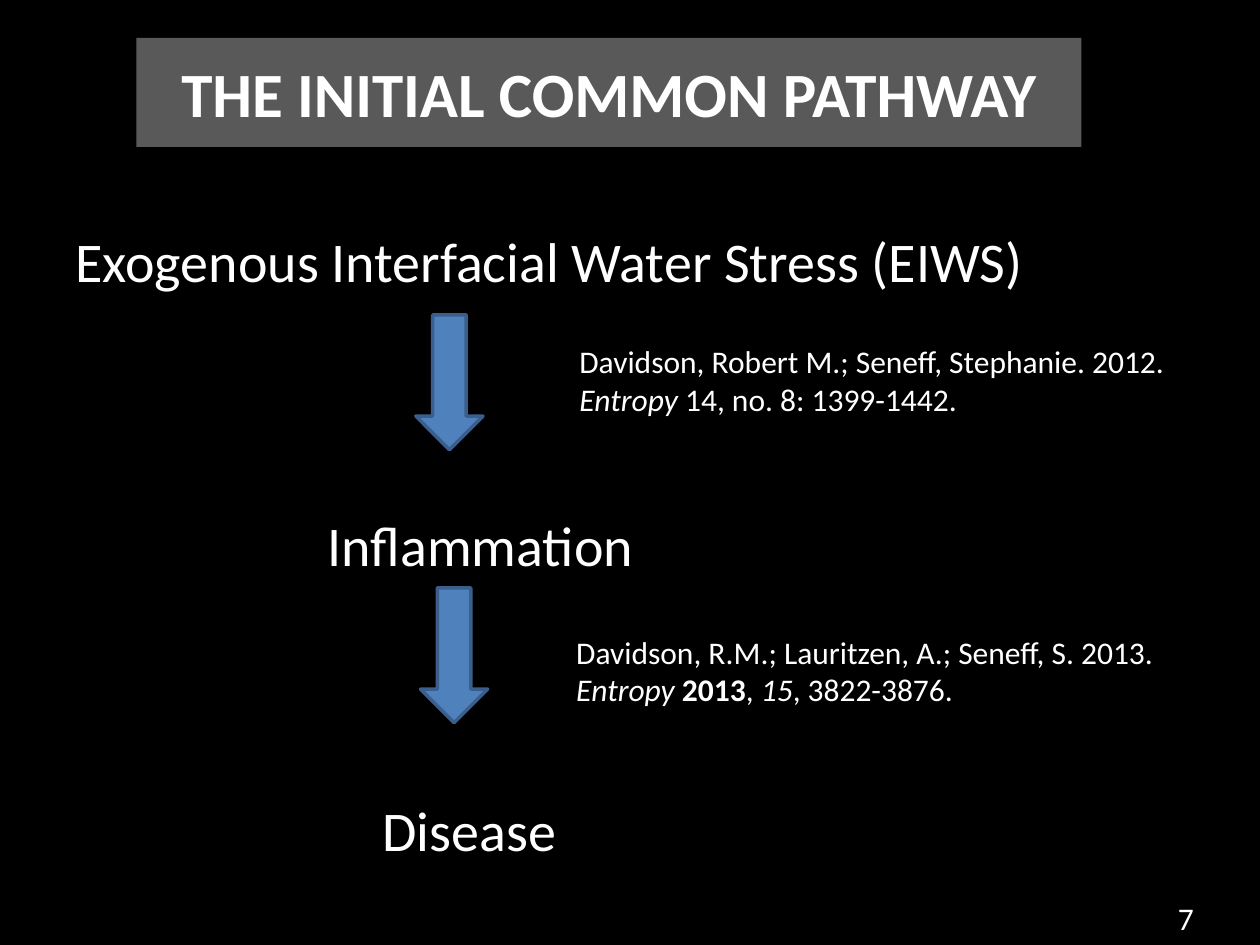
from pptx import Presentation
from pptx.dml.color import RGBColor
from pptx.enum.shapes import MSO_SHAPE
from pptx.enum.text import MSO_ANCHOR, PP_ALIGN
from pptx.util import Pt

RECT, ARROW = MSO_SHAPE.RECTANGLE, MSO_SHAPE.DOWN_ARROW
MIDDLE, CENTER = MSO_ANCHOR.MIDDLE, PP_ALIGN.CENTER
BLACK = RGBColor(0x00, 0x00, 0x00)
WHITE = RGBColor(0xFF, 0xFF, 0xFF)
GREY = RGBColor(0x59, 0x59, 0x59)
BLUE = RGBColor(0x4F, 0x81, 0xBD)
NAVY = RGBColor(0x3A, 0x5F, 0x8C)


class Deck:
    font = "Calibri"

    def __init__(self, width, height):
        self.prs = Presentation()
        self.prs.slide_width, self.prs.slide_height = Pt(width), Pt(height)
        self.slide = self.prs.slides.add_slide(self.prs.slide_layouts[6])
        back = self.slide.background.fill
        back.solid()
        back.fore_color.rgb = BLACK

    def put_lines(self, frame, lines, size):
        """Each line is a list of (text, format) runs."""
        frame.word_wrap = True
        for i, line in enumerate(lines):
            para = frame.paragraphs[0] if i == 0 else frame.add_paragraph()
            for text, style in line:
                run = para.add_run()
                run.text = text
                run.font.color.rgb = WHITE
                look = {"name": self.font, "size": Pt(size), **style}
                for key, value in look.items():
                    setattr(run.font, key, value)

    def text(self, box, lines, size):
        shape = self.slide.shapes.add_textbox(*map(Pt, box))
        self.put_lines(shape.text_frame, lines, size)

    def shape(self, kind, box, fill, line=None):
        shape = self.slide.shapes.add_shape(kind, *map(Pt, box))
        shape.shadow.inherit = False
        shape.fill.solid()
        shape.fill.fore_color.rgb = fill
        if line is None:
            shape.line.fill.background()
        else:
            shape.line.color.rgb = line
            shape.line.width = Pt(2)
        return shape

    def title(self, box, text):
        frame = self.shape(RECT, box, GREY).text_frame
        self.put_lines(frame, [[(text, {"bold": True})]], 36)
        frame.vertical_anchor = MIDDLE
        frame.paragraphs[0].alignment = CENTER

    def arrow(self, left, top):
        self.shape(ARROW, (left, top, 38.4, 77), BLUE, NAVY)


def main():
    deck = Deck(720, 540)
    plain, bold, slant = {}, {"bold": True}, {"italic": True}

    # Title band
    deck.title((78, 21.6, 540, 62.4), "THE INITIAL COMMON PATHWAY")

    # Steps of the pathway, evenly spaced
    steps = [
        (36, "Exogenous Interfacial Water Stress (EIWS)"),
        (180, "Inflammation"),
        (211.5, "Disease"),
    ]
    for i, (left, step) in enumerate(steps):
        deck.text((left, 126 + 162.4 * i, 648 - left, 46),
                  [[(step, plain)]], 32)

    # Arrows between the steps
    for left, top in [(237.6, 180), (240.3, 336)]:
        deck.arrow(left, top)

    # Citations
    deck.text((324, 192, 378, 51), [
        [("Davidson, Robert M.; Seneff, Stephanie. 2012.", plain)],
        [("Entropy ", slant), ("14, no. 8: 1399-1442.", plain)],
    ], 18)
    deck.text((322.2, 358, 368, 51), [
        [("Davidson, R.M.; Lauritzen, A.; Seneff, S. 2013.", plain)],
        [("Entropy ", slant), ("2013", bold), (", ", plain),
         ("15", slant), (", 3822-3876.", plain)],
    ], 18)

    # Page number
    deck.text((666, 510, 24, 29), [[("7", plain)]], 18)

    deck.prs.save("out.pptx")


if __name__ == "__main__":
    main()
